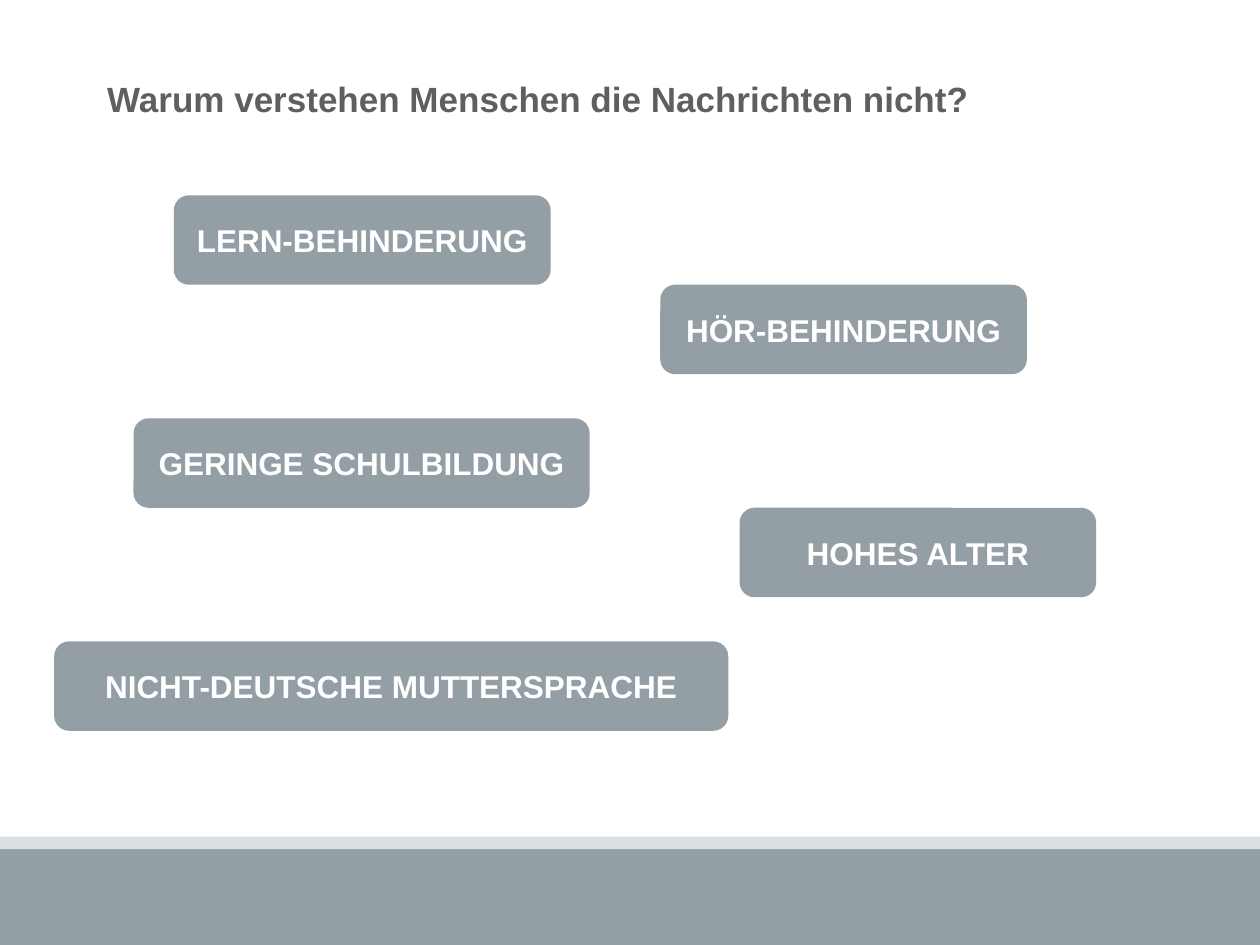
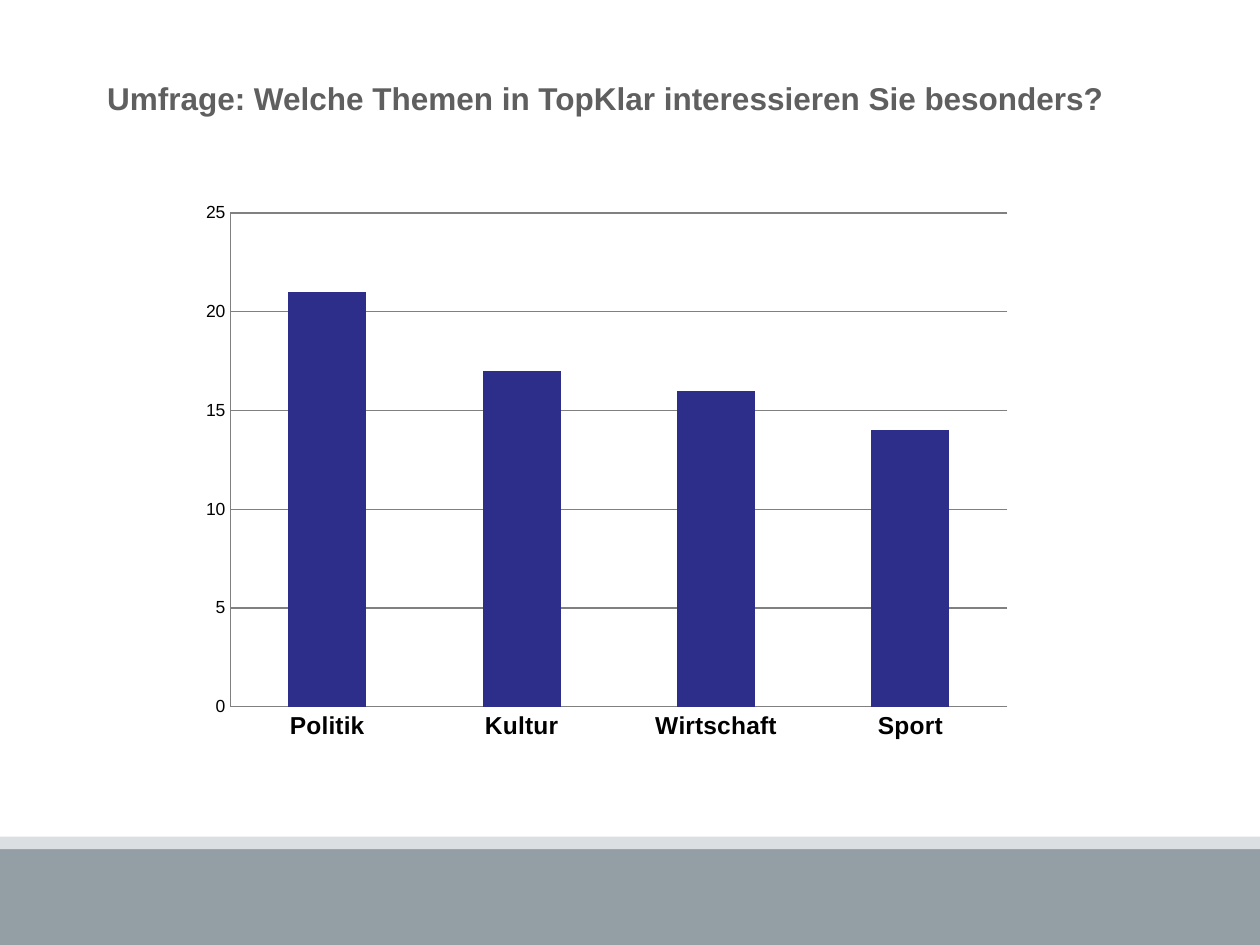
from pptx import Presentation
from pptx.chart.data import CategoryChartData
from pptx.dml.color import RGBColor
from pptx.enum.chart import XL_CHART_TYPE, XL_TICK_MARK
from pptx.enum.shapes import MSO_SHAPE
from pptx.enum.text import MSO_ANCHOR, MSO_AUTO_SIZE, PP_ALIGN
from pptx.oxml import parse_xml
from pptx.oxml.ns import nsdecls
from pptx.util import Inches, Pt

SLATE = RGBColor(0x94, 0x9E, 0xA5)
PALE = RGBColor(0xDC, 0xDF, 0xE1)
TITLE_GREY = RGBColor(0x5F, 0x5F, 0x5F)
AXIS_GREY = RGBColor(0x80, 0x80, 0x80)
BAR_BLUE = RGBColor(0x2D, 0x2D, 0x8A)
WHITE = RGBColor(0xFF, 0xFF, 0xFF)
BLACK = RGBColor(0, 0, 0)

FONT = "Arial"
COLUMNS, ROWS = 100, 75
CAUSE_HEIGHT = 7.1


class Deck:
    """Holds the style and the current slide; lengths are grid columns and rows."""

    def __init__(self):
        self.presentation = Presentation()
        self.presentation.slide_width = Inches(10)
        self.presentation.slide_height = Inches(7.5)
        self.column = self.presentation.slide_width / COLUMNS
        self.row = self.presentation.slide_height / ROWS
        self.slide = None

    def place(self, left, top, width, height):
        return (int(left * self.column), int(top * self.row),
                int(width * self.column), int(height * self.row))

    def style(self, font, size, color, bold=False):
        font.name = FONT
        font.size = Pt(size)
        font.bold = bold
        font.color.rgb = color

    def start_slide(self, question, size):
        layout = self.presentation.slide_layouts.get_by_name("Title Only")
        self.slide = self.presentation.slides.add_slide(layout)
        self.footer()
        self.title(question, size)

    def footer(self):
        self.block(MSO_SHAPE.RECTANGLE, (0, 66.6, COLUMNS, ROWS - 66.6), SLATE)
        self.block(MSO_SHAPE.RECTANGLE, (0, 66.4, COLUMNS, 1), PALE)

    def title(self, question, size):
        title = self.slide.shapes.title
        title.left, title.top, title.width, title.height = self.place(7.9, 1.9, 86.6, 11.8)
        frame = title.text_frame
        frame.text = question
        frame.word_wrap = True
        frame.auto_size = MSO_AUTO_SIZE.NONE
        frame.vertical_anchor = MSO_ANCHOR.MIDDLE
        frame.margin_left = frame.margin_top = frame.margin_bottom = Inches(0.06)
        frame.margin_right = Inches(0.1)
        paragraph = frame.paragraphs[0]
        paragraph.alignment = PP_ALIGN.LEFT
        self.style(paragraph.font, size, TITLE_GREY, bold=True)

    def block(self, kind, box, color):
        block = self.slide.shapes.add_shape(kind, *self.place(*box))
        block.shadow.inherit = False
        block.fill.solid()
        block.fill.fore_color.rgb = color
        block.line.fill.background()
        return block

    def cause(self, label, left, top, width):
        box = (left, top, width, CAUSE_HEIGHT)
        frame = self.block(MSO_SHAPE.ROUNDED_RECTANGLE, box, SLATE).text_frame
        frame.text = label
        frame.word_wrap = True
        frame.vertical_anchor = MSO_ANCHOR.MIDDLE
        paragraph = frame.paragraphs[0]
        paragraph.alignment = PP_ALIGN.CENTER
        self.style(paragraph.font, 18, WHITE, bold=True)

    def column_chart(self, name, votes, box, plot_box):
        data = CategoryChartData()
        data.categories = list(votes)
        data.add_series(name, list(votes.values()))
        chart = self.slide.shapes.add_chart(
            XL_CHART_TYPE.COLUMN_CLUSTERED, *self.place(*box), data).chart
        chart.has_title = False
        chart.has_legend = False
        self.style(chart.font, 10, BLACK)

        # Bars
        bars = chart.plots[0]
        bars.gap_width = 150
        bars.vary_by_categories = False
        fill = bars.series[0].format.fill
        fill.solid()
        fill.fore_color.rgb = BAR_BLUE

        # Axes
        topics, scale = chart.category_axis, chart.value_axis
        for axis in (topics, scale):
            axis.major_tick_mark = axis.minor_tick_mark = XL_TICK_MARK.NONE
            axis.format.line.color.rgb = AXIS_GREY
        self.style(topics.tick_labels.font, 14, BLACK, bold=True)
        scale.minimum_scale, scale.maximum_scale, scale.major_unit = 0, 25, 5
        scale.has_major_gridlines = True
        scale.major_gridlines.format.line.color.rgb = AXIS_GREY
        self.fix_plot(chart, plot_box)

    def fix_plot(self, chart, plot_box):
        """Pins the inner plot area, given as shares of the chart."""
        sizes = "".join(f'<c:{key} val="{share}"/>' for key, share in zip("xywh", plot_box))
        layout = parse_xml(
            f'<c:layout {nsdecls("c")}><c:manualLayout><c:layoutTarget val="inner"/>'
            f'<c:xMode val="edge"/><c:yMode val="edge"/>{sizes}'
            '</c:manualLayout></c:layout>')
        plot_area = chart.element.chart.plotArea
        for old_layout in plot_area.xpath("c:layout"):
            plot_area.remove(old_layout)
        plot_area.insert(0, layout)


def main():
    deck = Deck()

    # Causes
    deck.start_slide("Warum verstehen Menschen die Nachrichten nicht?", 20)
    causes = [
        ("LERN-BEHINDERUNG", 13.8, 15.5, 29.9),
        ("HÖR-BEHINDERUNG", 52.4, 22.6, 29.1),
        ("GERINGE SCHULBILDUNG", 10.6, 33.2, 36.2),
        ("HOHES ALTER", 58.7, 40.3, 28.3),
        ("NICHT-DEUTSCHE MUTTERSPRACHE", 4.3, 50.9, 53.5),
    ]
    for cause in causes:
        deck.cause(*cause)

    # Survey
    deck.start_slide("Umfrage: Welche Themen in TopKlar interessieren Sie besonders?", 18)
    votes = {"Politik": 21, "Kultur": 17, "Wirtschaft": 16, "Sport": 14}
    deck.column_chart("Series 1", votes, box=(6.4, 10.8, 79.1, 50.9),
                      plot_box=(0.15, 0.12, 0.78, 0.77))

    deck.presentation.save("out.pptx")


if __name__ == "__main__":
    main()
